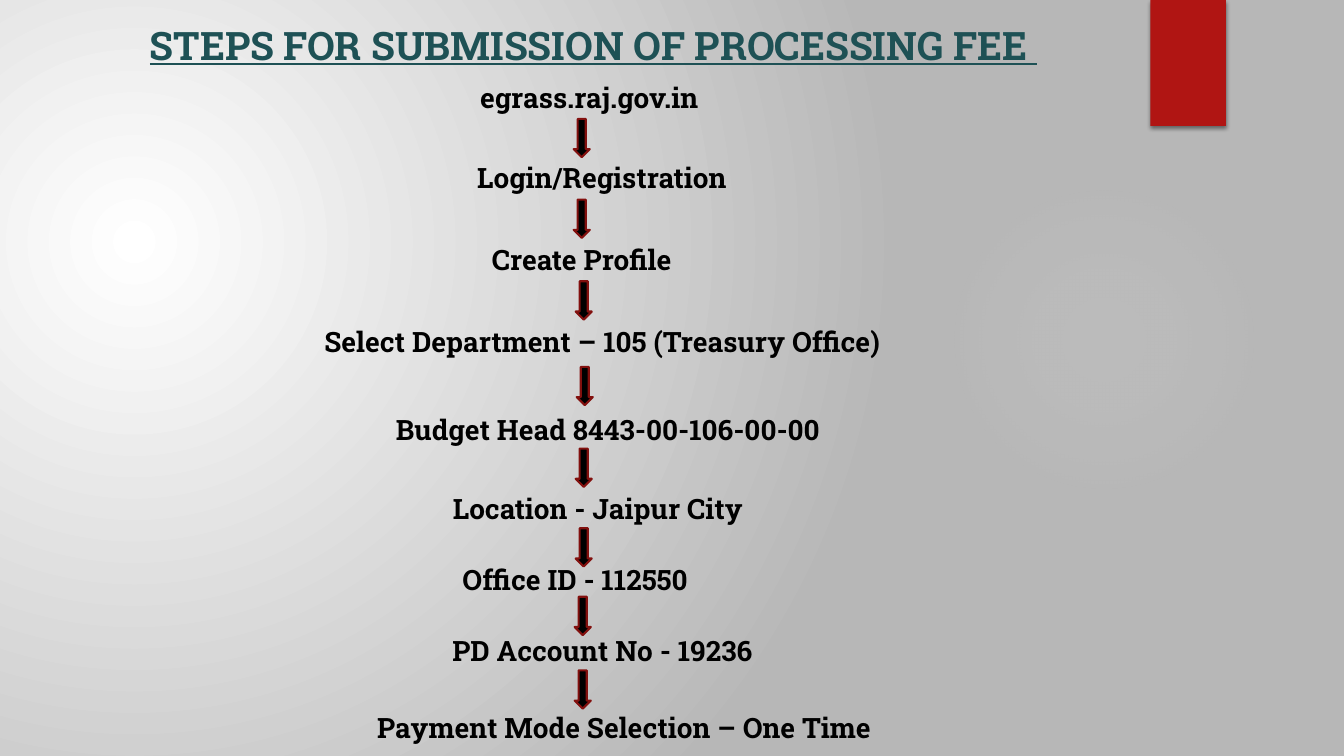
from lxml import etree
from pptx import Presentation
from pptx.dml.color import RGBColor as RGB
from pptx.enum.shapes import MSO_SHAPE as Shape
from pptx.enum.text import MSO_ANCHOR as Anchor, MSO_AUTO_SIZE as Auto, PP_ALIGN as Align
from pptx.oxml import parse_xml
from pptx.oxml.ns import nsdecls, qn
from pptx.util import Inches, Pt

HUES = {"white": "FFFFFF", "grey": "B7B7B7", "glow": "F3F3F3", "red": "B01513",
        "teal": "1E5155", "black": "000000", "edge": "82100E"}
NS = nsdecls("a")


def blend(root, stops, rect):
    grad = root.find(".//" + qn("a:gradFill"))
    for part in list(grad):
        grad.remove(part)
    marks = "".join(
        f'<a:gs pos="{pos * 1000}"><a:srgbClr val="{HUES[hue]}">'
        f'<a:alpha val="{alpha * 1000}"/></a:srgbClr></a:gs>' for pos, hue, alpha in stops)
    sides = " ".join(f'{side}="{size * 1000}"' for side, size in zip("ltrb", rect))
    grad.append(parse_xml(f"<a:gsLst {NS}>{marks}</a:gsLst>"))
    grad.append(parse_xml(f'<a:path {NS} path="circle"><a:fillToRect {sides}/></a:path>'))


def write(frame, text, style, hue):
    para = frame.paragraphs[0]
    para.alignment = Align.CENTER
    run = para.add_run()
    run.text = text
    for key, value in style.items():
        setattr(run.font, key, value)
    run.font.color.rgb = RGB.from_string(HUES[hue])


deck = Presentation()
deck.slide_width, deck.slide_height = Inches(13.33), Inches(7.5)
slide = deck.slides.add_slide(deck.slide_layouts[5])
shapes = slide.shapes

slide.background.fill.gradient()
blend(slide._element, [(0, "white", 100), (100, "grey", 100)], (45, 65, 125, 100))

glow = shapes.add_shape(Shape.OVAL, Inches(9.41), Inches(1.83), Inches(3.08), Inches(3.08))
glow.shadow.inherit = False
glow.line.fill.background()
glow.fill.gradient()
blend(glow._element, [(0, "glow", 7), (36, "glow", 6), (69, "glow", 0)], (50, 50, 50, 50))

flag = shapes.add_shape(Shape.RECTANGLE, Inches(11.41), 0, Inches(0.75), Inches(1.25))
flag.shadow.inherit = False
flag.line.fill.background()
flag.fill.solid()
flag.fill.fore_color.rgb = RGB.from_string(HUES["red"])
shade = etree.SubElement(flag._element.spPr.find(qn("a:effectLst")), qn("a:outerShdw"),
                         blurRad=str(Pt(3)), dist=str(Pt(2)), dir="5400000", rotWithShape="0")
tint = etree.SubElement(shade, qn("a:srgbClr"), val=HUES["black"])
etree.SubElement(tint, qn("a:alpha"), val="45000")

base = {"name": "Roboto Slab", "bold": True}
title = shapes.title
place = {"left": 0.74, "top": 0.16, "width": 10.29, "height": 1.53}
for key, value in place.items():
    setattr(title, key, Inches(value))
frame = title.text_frame
for key, value in {"word_wrap": True, "auto_size": Auto.NONE,
                   "vertical_anchor": Anchor.TOP}.items():
    setattr(frame, key, value)
write(frame, "STEPS FOR SUBMISSION OF PROCESSING FEE ",
      {**base, "size": Pt(28), "underline": True}, "teal")

steps = [
    ("egrass.raj.gov.in", 3.81, 0.75, 4.07),
    ("Login/Registration", 4.18, 1.54, 3.58),
    ("Create Profile", 4.08, 2.36, 3.38),
    ("Select Department – 105 (Treasury Office)", 2.21, 3.17, 7.53),
    ("Budget Head 8443-00-106-00-00", 2.07, 4.04, 7.92),
    ("Location - Jaipur City", 3.19, 4.83, 5.48),
    ("Office ID - 112550", 2.47, 5.53, 6.47),
    ("PD Account No - 19236", 3.99, 6.24, 3.97),
    ("Payment Mode Selection – One Time", 3.35, 7, 5.68),
]
for text, left, top, width in steps:
    box = shapes.add_textbox(Inches(left), Inches(top), Inches(width), Inches(0.44))
    box.text_frame.word_wrap = True
    box.text_frame.auto_size = Auto.SHAPE_TO_FIT_TEXT
    write(box.text_frame, text, {**base, "size": Pt(20)}, "black")

arrows = [(5.69, 1.18), (5.69, 1.98), (5.71, 2.79), (5.72, 3.64),
          (5.71, 4.45), (5.71, 5.24), (5.7, 5.92), (5.7, 6.65)]
for left, top in arrows:
    arrow = shapes.add_shape(Shape.DOWN_ARROW, Inches(left), Inches(top),
                             Inches(0.16), Inches(0.38))
    arrow.shadow.inherit = False
    arrow.fill.solid()
    arrow.fill.fore_color.rgb = RGB.from_string(HUES["black"])
    arrow.line.color.rgb = RGB.from_string(HUES["edge"])
    arrow.line.width = Pt(1.5)

deck.save("out.pptx")
